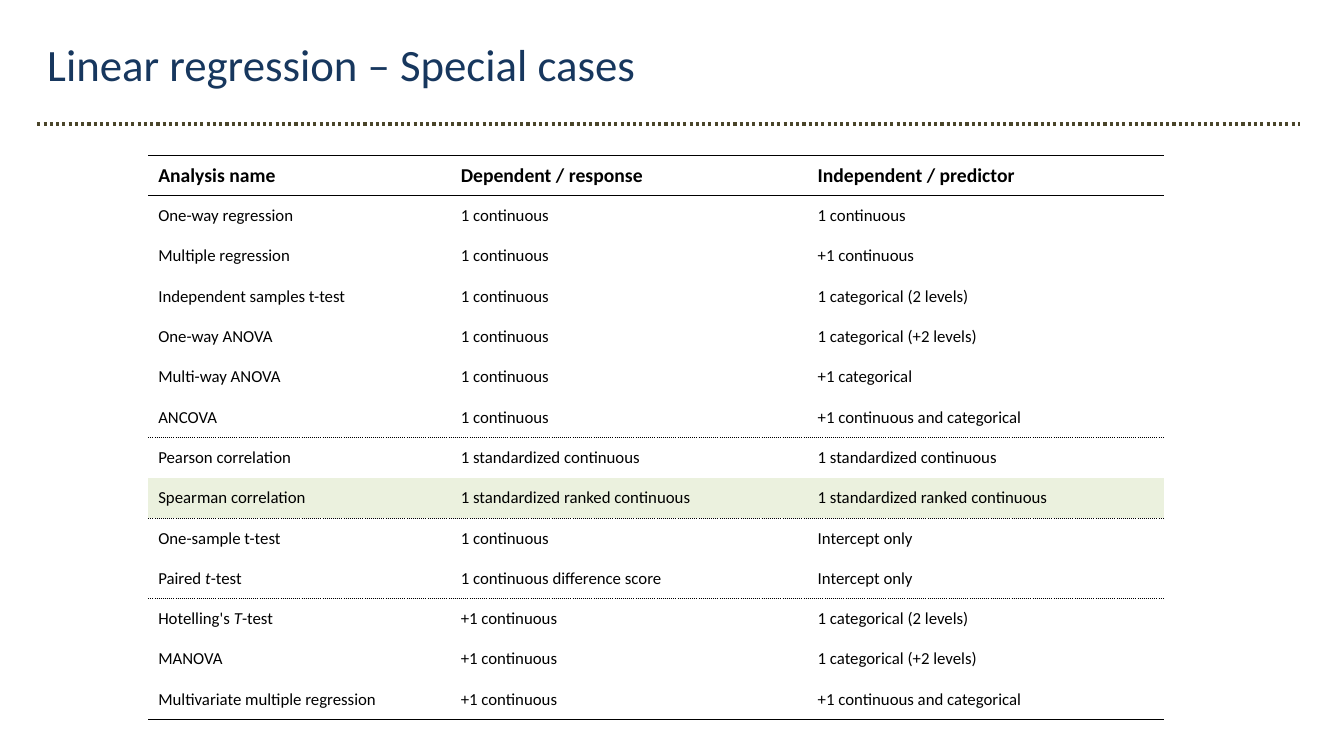
"""Build a slide that lists the special cases of linear regression."""
from dataclasses import dataclass

from lxml.etree import SubElement
from pptx import Presentation
from pptx.dml.color import RGBColor
from pptx.enum.dml import MSO_LINE
from pptx.enum.shapes import MSO_CONNECTOR
from pptx.enum.text import MSO_ANCHOR, MSO_AUTO_SIZE
from pptx.oxml import parse_xml
from pptx.oxml.ns import nsdecls, qn
from pptx.util import Inches, Pt

TITLE = "Linear regression – Special cases"
ROWS = [
    ("Analysis name", "Dependent / response", "Independent / predictor"),
    ("One-way regression", "1 continuous", "1 continuous"),
    ("Multiple regression", "1 continuous", "+1 continuous"),
    ("Independent samples t-test", "1 continuous", "1 categorical (2 levels)"),
    ("One-way ANOVA", "1 continuous", "1 categorical (+2 levels)"),
    ("Multi-way ANOVA", "1 continuous", "+1 categorical"),
    ("ANCOVA", "1 continuous", "+1 continuous and categorical"),
    ("Pearson correlation", "1 standardized continuous", "1 standardized continuous"),
    ("Spearman correlation", "1 standardized ranked continuous", "1 standardized ranked continuous"),
    ("One-sample t-test", "1 continuous", "Intercept only"),
    ("Paired *t*-test", "1 continuous difference score", "Intercept only"),
    ("Hotelling's *T*-test", "+1 continuous", "1 categorical (2 levels)"),
    ("MANOVA", "+1 continuous", "1 categorical (+2 levels)"),
    ("Multivariate multiple regression", "+1 continuous", "+1 continuous and categorical"),
]
HIGHLIGHTED_ROW = 8
RULES = {0: "solid", 1: "solid", 7: "sysDot", 9: "sysDot", 11: "sysDot", len(ROWS): "solid"}

WIDTH, HEIGHT = 13.33, 7.5
MARGIN, DIVIDER_TOP, DIVIDER_END = 0.37, 1.23, 12.89
TABLE_LEFT, TABLE_TOP, ROW_HEIGHT = 1.47, 1.54, 0.4
COLUMN_WIDTHS = (3, 3.54, 3.54)


@dataclass(frozen=True)
class Theme:
    """Fonts, type sizes and colours of the slide."""
    font: str = "Calibri"
    title_size: int = 32
    header_size: int = 14
    body_size: int = 12
    title: str = "17375E"
    text: str = "000000"
    divider: str = "4A452A"
    highlight: str = "EBF1DE"


THEME = Theme()


def add_text(paragraph, text, size, color, bold=False):
    """Write text as runs, with the parts between asterisks in italics."""
    for index, part in enumerate(text.split("*")):
        run = paragraph.add_run()
        run.text = part
        font_format = {"name": THEME.font, "size": Pt(size), "bold": bold, "italic": index % 2 == 1}
        for name, value in font_format.items():
            setattr(run.font, name, value)
        run.font.color.rgb = RGBColor.from_string(color)


def set_borders(cell, top, bottom):
    """Draw the rules above and below a cell and hide its side borders."""
    properties = cell._tc.get_or_add_tcPr()
    for position, (side, dash) in enumerate(zip("LRTB", (None, None, top, bottom))):
        if dash:
            content = (f'<a:solidFill><a:srgbClr val="{THEME.text}"/></a:solidFill>'
                       f'<a:prstDash val="{dash}"/>')
        else:
            content = "<a:noFill/>"
        border = parse_xml(f'<a:ln{side} {nsdecls("a")} w="{Pt(1)}">{content}</a:ln{side}>')
        properties.insert(position, border)


def add_title(slide):
    """Add the title and the dotted divider below it."""
    box = slide.shapes.add_textbox(*map(Inches, (MARGIN, 0.32, 6.54, 0.64)))
    box.text_frame.word_wrap = True
    box.text_frame.auto_size = MSO_AUTO_SIZE.SHAPE_TO_FIT_TEXT
    add_text(box.text_frame.paragraphs[0], TITLE, THEME.title_size, THEME.title)
    ends = (MARGIN, DIVIDER_TOP, DIVIDER_END, DIVIDER_TOP)
    divider = slide.shapes.add_connector(MSO_CONNECTOR.STRAIGHT, *map(Inches, ends))
    divider.line.color.rgb = RGBColor.from_string(THEME.divider)
    divider.line.width = Pt(2.25)
    divider.line.dash_style = MSO_LINE.ROUND_DOT
    SubElement(divider._element.spPr, qn("a:effectLst"))


def add_analysis_table(slide):
    """Add the table of analyses with its rules and highlighted row."""
    area = (TABLE_LEFT, TABLE_TOP, sum(COLUMN_WIDTHS), ROW_HEIGHT * len(ROWS))
    table = slide.shapes.add_table(len(ROWS), len(COLUMN_WIDTHS), *map(Inches, area)).table
    table.first_row = table.horz_banding = False
    for column, width in zip(table.columns, COLUMN_WIDTHS):
        column.width = Inches(width)
    for row_index, texts in enumerate(ROWS):
        table.rows[row_index].height = Inches(ROW_HEIGHT)
        header = row_index == 0
        size = THEME.header_size if header else THEME.body_size
        for column_index, text in enumerate(texts):
            cell = table.cell(row_index, column_index)
            cell.vertical_anchor = MSO_ANCHOR.MIDDLE
            if row_index == HIGHLIGHTED_ROW:
                cell.fill.solid()
                cell.fill.fore_color.rgb = RGBColor.from_string(THEME.highlight)
            else:
                cell.fill.background()
            set_borders(cell, RULES.get(row_index), RULES.get(row_index + 1))
            add_text(cell.text_frame.paragraphs[0], text, size, THEME.text, header)


def main():
    """Create and save the presentation."""
    presentation = Presentation()
    presentation.slide_width, presentation.slide_height = Inches(WIDTH), Inches(HEIGHT)
    slide = presentation.slides.add_slide(presentation.slide_layouts[6])
    add_title(slide)
    add_analysis_table(slide)
    presentation.save("out.pptx")


if __name__ == "__main__":
    main()
